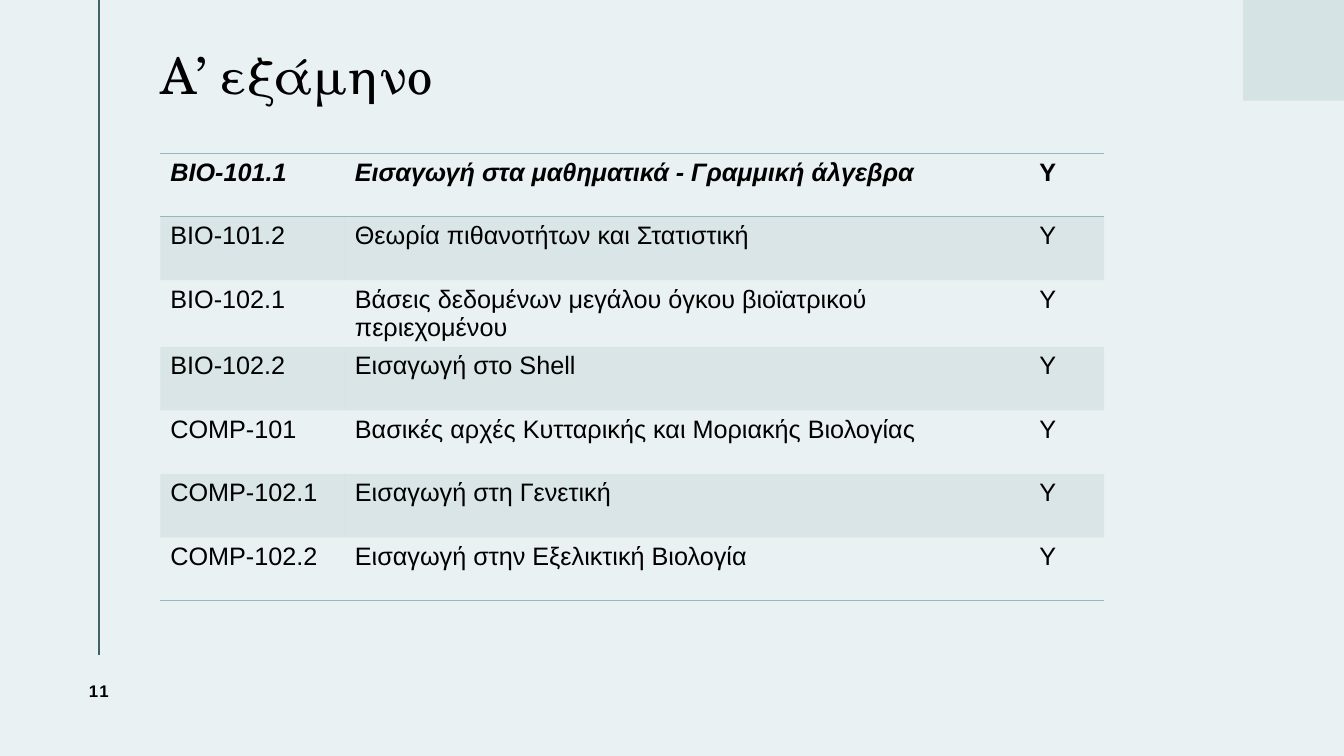
from lxml.etree import SubElement
from pptx import Presentation
from pptx.dml.color import RGBColor
from pptx.enum.shapes import MSO_CONNECTOR, MSO_SHAPE
from pptx.enum.text import MSO_ANCHOR, PP_ALIGN
from pptx.oxml import parse_xml
from pptx.oxml.ns import nsdecls, qn
from pptx.util import Inches, Pt

# Content
TITLE = "Α’ εξάμηνο"
PAGE = "11"
COURSES = [
    ("ΒΙΟ-101.1", "Εισαγωγή στα μαθηματικά - Γραμμική άλγεβρα", "Υ"),
    ("ΒΙΟ-101.2", "Θεωρία πιθανοτήτων και Στατιστική", "Υ"),
    ("ΒΙΟ-102.1", "Βάσεις δεδομένων μεγάλου όγκου βιοϊατρικού\nπεριεχομένου", "Υ"),
    ("ΒΙΟ-102.2", "Εισαγωγή στο Shell", "Υ"),
    ("COMP-101", "Βασικές αρχές Κυτταρικής και Μοριακής Βιολογίας", "Υ"),
    ("COMP-102.1", "Εισαγωγή στη Γενετική", "Υ"),
    ("COMP-102.2", "Εισαγωγή στην Εξελικτική Βιολογία", "Υ"),
]
COLORS = {"bg": "EAF1F2", "rule": "40636A", "corner": "D5E3E5",
          "table": "95B8BF", "text": "000000"}
COL_WIDTHS = (1.83, 6.79, 0.74)
ROW_HEIGHT = 0.63
LEFT = 1.59
NO_STYLE = "{2D5ABB26-0587-4C30-8999-92F81FD0307C}"


def rgb(name):
    return RGBColor.from_string(COLORS[name])


def write(tf, text, size=18, font="Arial", bold=False, italic=False,
          align=None, line=None, spacing=None):
    for i, part in enumerate(text.split("\n")):
        p = tf.paragraphs[0] if i == 0 else tf.add_paragraph()
        p.alignment = align
        p.line_spacing = line
        r = p.add_run()
        r.text = part
        r.font.size, r.font.name = Pt(size), font
        r.font.bold, r.font.italic = bold, italic
        r.font.color.rgb = rgb("text")
        if spacing:
            r.font._element.set("spc", str(int(spacing * 100)))


def set_borders(cell, sides):
    """Draw the lines on the given sides, in the order L, R, T, B."""
    tcPr = cell._tc.get_or_add_tcPr()
    for i, side in enumerate(sides):
        tcPr.insert(i, parse_xml(
            f'<a:ln{side} {nsdecls("a")} w="12700"><a:solidFill>'
            f'<a:srgbClr val="{COLORS["table"]}"/></a:solidFill></a:ln{side}>'))


def set_band(cell, banded):
    if not banded:
        cell.fill.background()
        return
    cell.fill.solid()
    cell.fill.fore_color.rgb = rgb("table")
    color = cell._tc.tcPr.find(qn("a:solidFill")).find(qn("a:srgbClr"))
    SubElement(color, qn("a:alpha")).set("val", "20000")


prs = Presentation()
prs.slide_width, prs.slide_height = Inches(13.33), Inches(7.5)
s = prs.slides.add_slide(prs.slide_layouts[5])
s.background.fill.solid()
s.background.fill.fore_color.rgb = rgb("bg")

# Vertical rule and corner square
rule = s.shapes.add_connector(MSO_CONNECTOR.STRAIGHT, Inches(0.98), 0,
                              Inches(0.98), Inches(6.5))
rule.line.color.rgb = rgb("rule")
rule.line.width = Pt(1.5)
SubElement(rule._element.spPr, qn("a:effectLst"))
corner = s.shapes.add_shape(MSO_SHAPE.RECTANGLE, Inches(12.33), 0,
                            Inches(1), Inches(1))
corner.shadow.inherit = False
corner.fill.solid()
corner.fill.fore_color.rgb = rgb("corner")
corner.line.fill.background()

# Title
title = s.shapes.title
title.left, title.top = Inches(LEFT), Inches(0)
title.width, title.height = Inches(10.01), Inches(1.56)
tf = title.text_frame
tf.margin_left = 0
tf.vertical_anchor = MSO_ANCHOR.MIDDLE
write(tf, TITLE, size=36, font="TeX Gyre Schola", align=PP_ALIGN.LEFT, line=0.9)

# Course table
frame = s.shapes.add_table(len(COURSES), len(COL_WIDTHS), Inches(LEFT), Inches(1.52),
                           Inches(sum(COL_WIDTHS)), Inches(ROW_HEIGHT * len(COURSES)))
table = frame.table
table._tbl.tblPr.find(qn("a:tableStyleId")).text = NO_STYLE
for col, width in zip(table.columns, COL_WIDTHS):
    col.width = Inches(width)
last = len(COURSES) - 1
for i, course in enumerate(COURSES):
    table.rows[i].height = Inches(ROW_HEIGHT)
    for j, text in enumerate(course):
        cell = table.cell(i, j)
        write(cell.text_frame, text, bold=i == 0, italic=i == 0 and j < 2)
        set_band(cell, i % 2 == 1)
        set_borders(cell, {0: "TB", last: "B"}.get(i, ""))

# Page number
page = s.shapes.add_textbox(Inches(0.45), Inches(6.5), Inches(1.06), Inches(0.71))
tf = page.text_frame
tf.word_wrap = True
tf.vertical_anchor = MSO_ANCHOR.MIDDLE
write(tf, PAGE, size=12, bold=True, align=PP_ALIGN.CENTER, spacing=1.5)

prs.save("out.pptx")
